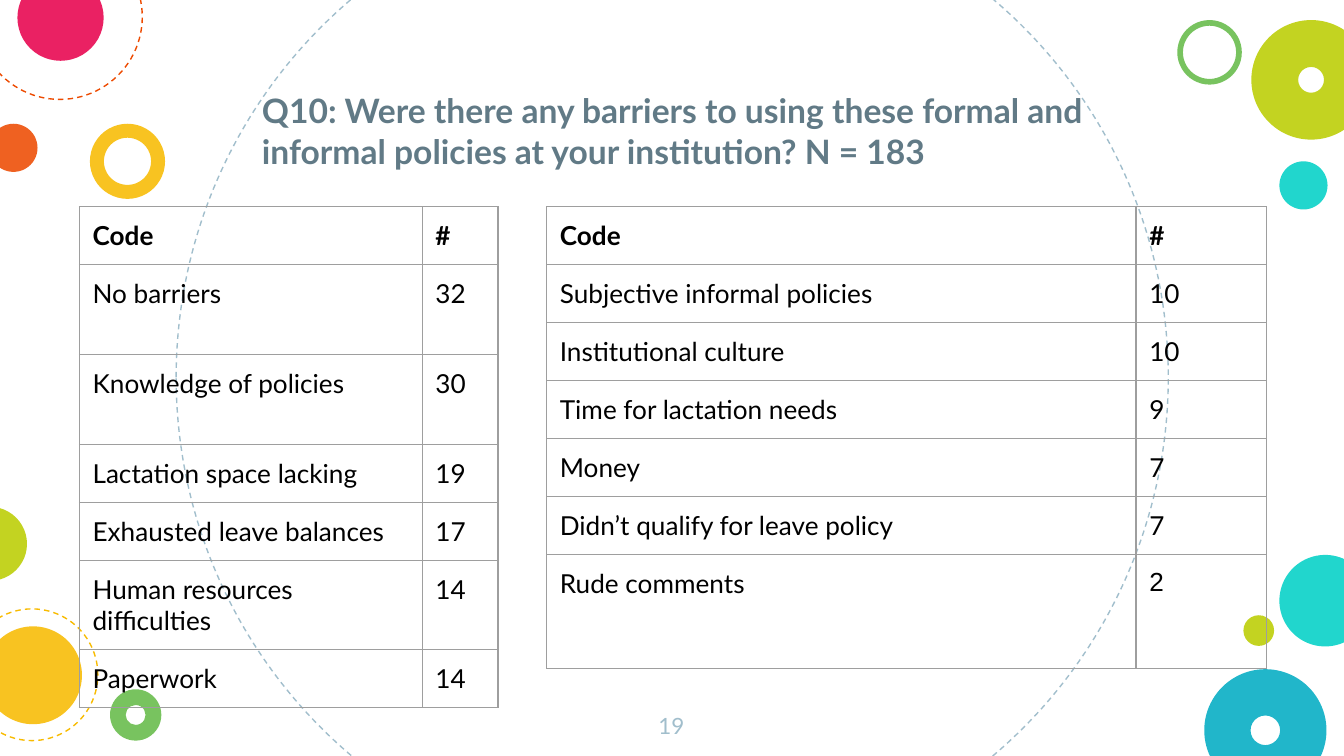
import pptx
import pptx.util
import pptx.dml.color
import pptx.enum.dml
import pptx.enum.shapes
import pptx.enum.text
from lxml import etree
from pptx.oxml.ns import qn

Cm, Pt = pptx.util.Cm, pptx.util.Pt
Align = pptx.enum.text.PP_ALIGN
Anchor = pptx.enum.text.MSO_ANCHOR

PINK, ORANGE, YELLOW = "E8004C", "ED4A00", "F8BB00"
GREEN, LIME, TEAL, BLUE = "65BB48", "BBCD00", "00D1C6", "00ACC3"
PALE, SLATE, GREY, BLACK = "A1BECC", "617A86", "9E9E9E", "000000"


def color(value):
    return pptx.dml.color.RGBColor.from_string(value)


def write(frame, text, size=14, font="Lato", ink=BLACK, bold=False, align=Align.LEFT):
    para = frame.paragraphs[0]
    para.alignment = align
    span = para.add_run()
    span.text = text
    span.font.size = Pt(size)
    span.font.name = font
    span.font.bold = bold
    span.font.color.rgb = color(ink)


class SlideBuilder:
    inset = 0.25
    line_width = 0.75
    opacity = 87

    def __init__(self, deck):
        self.page = deck.slides.add_slide(deck.slide_layouts[5])

    def place(self, box, left, top, width, height):
        box.left, box.top, box.width, box.height = map(Cm, (left, top, width, height))

    def pad(self, target):
        target.margin_left = target.margin_right = Cm(self.inset)
        target.margin_top = target.margin_bottom = Cm(self.inset)

    def circle(self, left, top, size, fill=None, line=None, ring=None):
        kinds = pptx.enum.shapes.MSO_SHAPE
        shape = self.page.shapes.add_shape(
            kinds.DONUT if ring else kinds.OVAL, Cm(left), Cm(top), Cm(size), Cm(size))
        shape.shadow.inherit = False
        if ring:
            shape.adjustments[0] = ring
        if fill:
            shape.fill.solid()
            shape.fill.fore_color.rgb = color(fill)
            tint = shape.fill._xPr.find(qn("a:solidFill"))[0]
            etree.SubElement(tint, qn("a:alpha"), val=str(self.opacity * 1000))
        else:
            shape.fill.background()
        if line:
            shape.line.color.rgb = color(line)
            shape.line.width = Pt(self.line_width)
            shape.line.dash_style = pptx.enum.dml.MSO_LINE.DASH
        else:
            shape.line.fill.background()

    def title(self, text, *area):
        box = self.page.shapes.title
        self.place(box, *area)
        frame = box.text_frame
        frame.word_wrap = True
        frame.auto_size = pptx.enum.text.MSO_AUTO_SIZE.NONE
        frame.vertical_anchor = Anchor.BOTTOM
        self.pad(frame)
        write(frame, text, size=18, ink=SLATE, bold=True)
        # Bring the title in front of the circles
        self.page.shapes._spTree.append(box._element)

    def page_number(self, text, *area):
        box = self.page.shapes.add_textbox(*map(Cm, area))
        box.text_frame.word_wrap = True
        self.pad(box.text_frame)
        write(box.text_frame, text, size=12, ink=PALE, align=Align.CENTER)

    def border(self, cell):
        properties = cell._tc.get_or_add_tcPr()
        for position, side in enumerate(("lnL", "lnR", "lnT", "lnB")):
            edge = etree.Element(qn("a:" + side), w=str(Pt(self.line_width)))
            fill = etree.SubElement(edge, qn("a:solidFill"))
            etree.SubElement(fill, qn("a:srgbClr"), val=GREY)
            properties.insert(position, edge)

    def table(self, left, top, widths, heights, rows):
        grid = self.page.shapes.add_table(
            len(rows), len(widths), Cm(left), Cm(top),
            Cm(sum(widths)), Cm(sum(heights))).table
        grid.first_row = grid.horz_banding = False
        for column, width in zip(grid.columns, widths):
            column.width = Cm(width)
        for i, (row, height) in enumerate(zip(rows, heights)):
            grid.rows[i].height = Cm(height)
            for j, text in enumerate(row):
                cell = grid.cell(i, j)
                cell.fill.background()
                self.pad(cell)
                self.border(cell)
                font = "Arial" if text == "2" else "Lato"
                write(cell.text_frame, text, font=font, bold=i == 0)


def main():
    deck = pptx.Presentation()
    deck.slide_width, deck.slide_height = Cm(25.4), Cm(14.29)
    slide = SlideBuilder(deck)

    # Dashed outlines
    for left, top, size, line in [
        (3.33, -2.24, 18.75, PALE),
        (-0.43, -1.24, 3.12, ORANGE),
        (-0.64, 11.51, 2.49, YELLOW),
    ]:
        slide.circle(left, top, size, line=line)

    # Filled discs, and rings where a thickness is given
    for left, top, size, fill, ring in [
        (24.18, 10.49, 1.73, TEAL, None),
        (1.7, 2.34, 1.42, YELLOW, 0.186),
        (22.76, 12.65, 2.31, BLUE, 0.379),
        (23.5, 11.63, 0.58, LIME, None),
        (22.25, 0.38, 1.22, GREEN, 0.088),
        (-0.2, 2.34, 0.91, ORANGE, None),
        (23.65, 0.38, 2.26, LIME, 0.392),
        (0.33, -0.48, 1.63, PINK, None),
        (2.08, 13.03, 0.97, GREEN, 0.306),
        (-0.3, 11.84, 1.85, YELLOW, None),
        (-0.89, 9.58, 1.4, LIME, None),
        (24.18, 3.05, 0.91, TEAL, None),
    ]:
        slide.circle(left, top, size, fill=fill, ring=ring)

    # Title and page number
    slide.title("Q10: Were there any barriers to using these formal and "
                "informal policies at your institution? N = 183",
                4.7, 1.09, 16.69, 2.39)
    slide.page_number("19", 12.04, 13.21, 1.3, 1.09)

    # Tables of coded answers
    header = ("Code", "#")
    slide.table(1.5, 3.91, (6.48, 1.43), (1.09, 1.7, 1.7, 1.09, 1.09, 1.07, 1.07), [
        header,
        ("No barriers", "32"),
        ("Knowledge of policies", "30"),
        ("Lactation space lacking", "19"),
        ("Exhausted leave balances", "17"),
        ("Human resources difficulties", "14"),
        ("Paperwork", "14"),
    ])
    slide.table(10.33, 3.91, (11.14, 2.47), (1.02, 1.07, 1.07, 1.02, 1.02, 0.99, 2.16), [
        header,
        ("Subjective informal policies", "10"),
        ("Institutional culture", "10"),
        ("Time for lactation needs", "9"),
        ("Money", "7"),
        ("Didn’t qualify for leave policy", "7"),
        ("Rude comments", "2"),
    ])

    deck.save("out.pptx")


if __name__ == "__main__":
    main()
